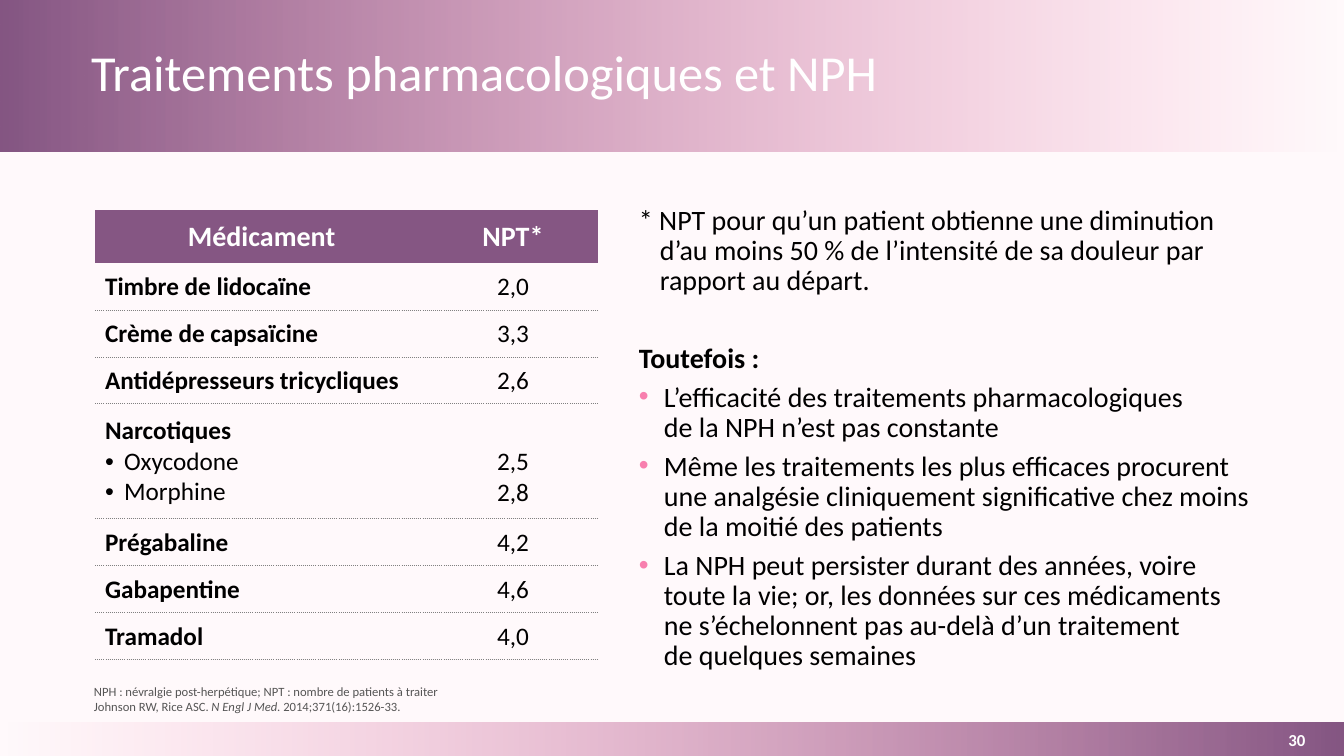
from lxml.etree import SubElement
from pptx import Presentation
from pptx.dml.color import RGBColor
from pptx.enum.shapes import MSO_SHAPE
from pptx.enum.text import MSO_ANCHOR, MSO_AUTO_SIZE, PP_ALIGN
from pptx.oxml import parse_xml
from pptx.oxml.ns import nsdecls, qn
from pptx.util import Emu, Pt

PX = 914400 / 100.8
COLORS = {
    "purple": "855683", "pink": "F87FAE", "page": "FFF9FB", "white": "FFFFFF",
    "black": "000000", "note": "555555", "rule": "808080",
}
NO_TABLE_STYLE = "{2D5ABB26-0587-4C30-8999-92F81FD0307C}"


def px(length):
    return Emu(round(length * PX))


def rgb(name):
    return RGBColor.from_string(COLORS[name])


class SlideBuilder:
    font = "Calibri"

    def __init__(self, slide):
        self.slide = slide
        slide.background.fill.solid()
        slide.background.fill.fore_color.rgb = rgb("page")

    def style(self, paragraph, size, color="black", bold=False, align=PP_ALIGN.LEFT):
        paragraph.alignment = align
        font = paragraph.font
        font.name, font.size, font.bold = self.font, Pt(size), bold
        font.color.rgb = rgb(color)

    def indent(self, paragraph, hang, bullet=None, color="black"):
        """Give a hanging indent and, if asked, a bullet."""
        properties = paragraph._p.get_or_add_pPr()
        properties.set("marL", str(px(hang)))
        properties.set("indent", str(-px(hang)))
        if bullet:
            tint = SubElement(properties, qn("a:buClr"))
            SubElement(tint, qn("a:srgbClr"), val=COLORS[color])
            SubElement(properties, qn("a:buFont"), typeface="Arial")
            SubElement(properties, qn("a:buChar"), char=bullet)

    def band(self, top, height, angle):
        """Draw a full-width strip that fades from purple to clear pink."""
        strip = self.slide.shapes.add_shape(
            MSO_SHAPE.RECTANGLE, 0, px(top), px(1344), px(height))
        strip.shadow.inherit = False
        strip.line.fill.background()
        strip.fill.gradient()
        strip.fill.gradient_angle = angle
        for stop, color, position in zip(
                strip.fill.gradient_stops, ("purple", "pink"), (0, 1)):
            stop.color.rgb = rgb(color)
            stop.position = position
        clear_end = list(strip.element.iter(qn("a:srgbClr")))[-1]
        SubElement(clear_end, qn("a:alpha"), val="0")

    def title(self, text, left, top, width, height):
        title = self.slide.shapes.title
        title.left, title.top = px(left), px(top)
        title.width, title.height = px(width), px(height)
        frame = title.text_frame
        frame.text = text
        frame.auto_size = MSO_AUTO_SIZE.NONE
        frame.vertical_anchor = MSO_ANCHOR.MIDDLE
        heading = frame.paragraphs[0]
        heading.line_spacing = 0.9
        self.style(heading, 36, "white")
        self.slide.shapes._spTree.append(title.element)  # above the bands

    def text_box(self, left, top, width, height, anchor=MSO_ANCHOR.TOP):
        frame = self.slide.shapes.add_textbox(
            px(left), px(top), px(width), px(height)).text_frame
        frame.word_wrap = True
        frame.vertical_anchor = anchor
        return frame

    def paragraphs(self, frame, texts):
        """Fill a text frame and yield each paragraph for styling."""
        for index, text in enumerate(texts):
            paragraph = frame.add_paragraph() if index else frame.paragraphs[0]
            paragraph.text = text
            yield paragraph

    def bottom_rule(self, cell):
        cell._tc.get_or_add_tcPr().insert(0, parse_xml(
            f'<a:lnB {nsdecls("a")} w="9525"><a:solidFill>'
            f'<a:srgbClr val="{COLORS["rule"]}"/></a:solidFill>'
            '<a:prstDash val="sysDot"/></a:lnB>'))

    def table(self, left, top, widths, heights, rows):
        graphic = self.slide.shapes.add_table(
            len(rows), len(widths), px(left), px(top),
            px(sum(widths)), px(sum(heights)))
        table = graphic.table
        next(graphic.element.iter(qn("a:tableStyleId"))).text = NO_TABLE_STYLE
        for column, width in zip(table.columns, widths):
            column.width = px(width)
        for row, height in zip(table.rows, heights):
            row.height = px(height)
        for r, row in enumerate(rows):
            for c, lines in enumerate(row):
                self.cell(table.cell(r, c), lines, r == 0, c == 0)
        return table

    def cell(self, cell, lines, header, drug):
        cell.vertical_anchor = MSO_ANCHOR.MIDDLE
        for index, paragraph in enumerate(self.paragraphs(cell.text_frame, lines)):
            if drug and index:
                self.indent(paragraph, 19, "•")
            align = PP_ALIGN.LEFT if drug and not header else PP_ALIGN.CENTER
            self.style(paragraph, 20 if header else 18,
                       "white" if header else "black",
                       header or (drug and index == 0), align)
        if header:
            cell.fill.solid()
            cell.fill.fore_color.rgb = rgb("purple")
        else:
            cell.fill.background()
            self.bottom_rule(cell)


TREATMENTS = [
    (["Médicament"], ["NPT*"]),
    (["Timbre de lidocaïne"], ["2,0"]),
    (["Crème de capsaïcine"], ["3,3"]),
    (["Antidépresseurs tricycliques"], ["2,6"]),
    (["Narcotiques", "Oxycodone", "Morphine"], ["2,5", "2,8"]),
    (["Prégabaline"], ["4,2"]),
    (["Gabapentine"], ["4,6"]),
    (["Tramadol"], ["4,0"]),
]
DEFINITION = ("* NPT pour qu’un patient obtienne une diminution d’au moins 50 % "
              "de l’intensité de sa douleur par rapport au départ.")
HOWEVER = "Toutefois :"
LIMITS = [
    "L’efficacité des traitements pharmacologiques \vde la NPH n’est pas constante",
    "Même les traitements les plus efficaces procurent une analgésie cliniquement "
    "significative chez moins de la moitié des patients",
    "La NPH peut persister durant des années, voire toute la vie; or, les données "
    "sur ces médicaments ne s’échelonnent pas au-delà d’un traitement "
    "\vde quelques semaines",
]


def main():
    deck = Presentation()
    deck.slide_width, deck.slide_height = px(1344), px(756)
    page = SlideBuilder(deck.slides.add_slide(deck.slide_layouts[5]))

    page.band(723, 33, 180)
    page.band(0, 152, 0)
    page.title("Traitements pharmacologiques et NPH", 81, 18, 1156, 115)

    notes = page.text_box(84, 652, 1176, 67, MSO_ANCHOR.BOTTOM)
    abbreviations = "NPH : névralgie post-herpétique; NPT : nombre de patients à traiter"
    for note in page.paragraphs(notes, [abbreviations, "Johnson RW, Rice ASC. "]):
        page.style(note, 9, "note")
    journal = note.add_run()
    journal.text = "N Engl J Med. "
    journal.font.italic = True
    note.add_run().text = "2014;371(16):1526-33."

    comments = page.text_box(629, 201, 636, 536)
    for comment in page.paragraphs(comments, [DEFINITION, HOWEVER, *LIMITS]):
        comment.line_spacing = 0.9
        comment.space_after = Pt(6)
        if comment.text == DEFINITION:
            page.indent(comment, 21)
        elif comment.text == HOWEVER:
            comment.space_before = Pt(28)
        else:
            page.indent(comment, 25, "•", "pink")
        page.style(comment, 20, bold=comment.text == HOWEVER)

    heights = [53, 47, 47, 47, 115, 47, 47, 47]
    table = page.table(95, 210, [333, 170], heights, TREATMENTS)
    narcotic_values = table.cell(4, 1)
    narcotic_values.vertical_anchor = MSO_ANCHOR.BOTTOM
    narcotic_values.margin_bottom = px(11)

    number = page.text_box(1250, 723, 94, 33, MSO_ANCHOR.MIDDLE)
    number.margin_left = number.margin_right = 0
    number.margin_top = number.margin_bottom = 0
    number.text = "30"
    page.style(number.paragraphs[0], 12, "white", True, PP_ALIGN.CENTER)

    deck.save("out.pptx")


if __name__ == "__main__":
    main()
